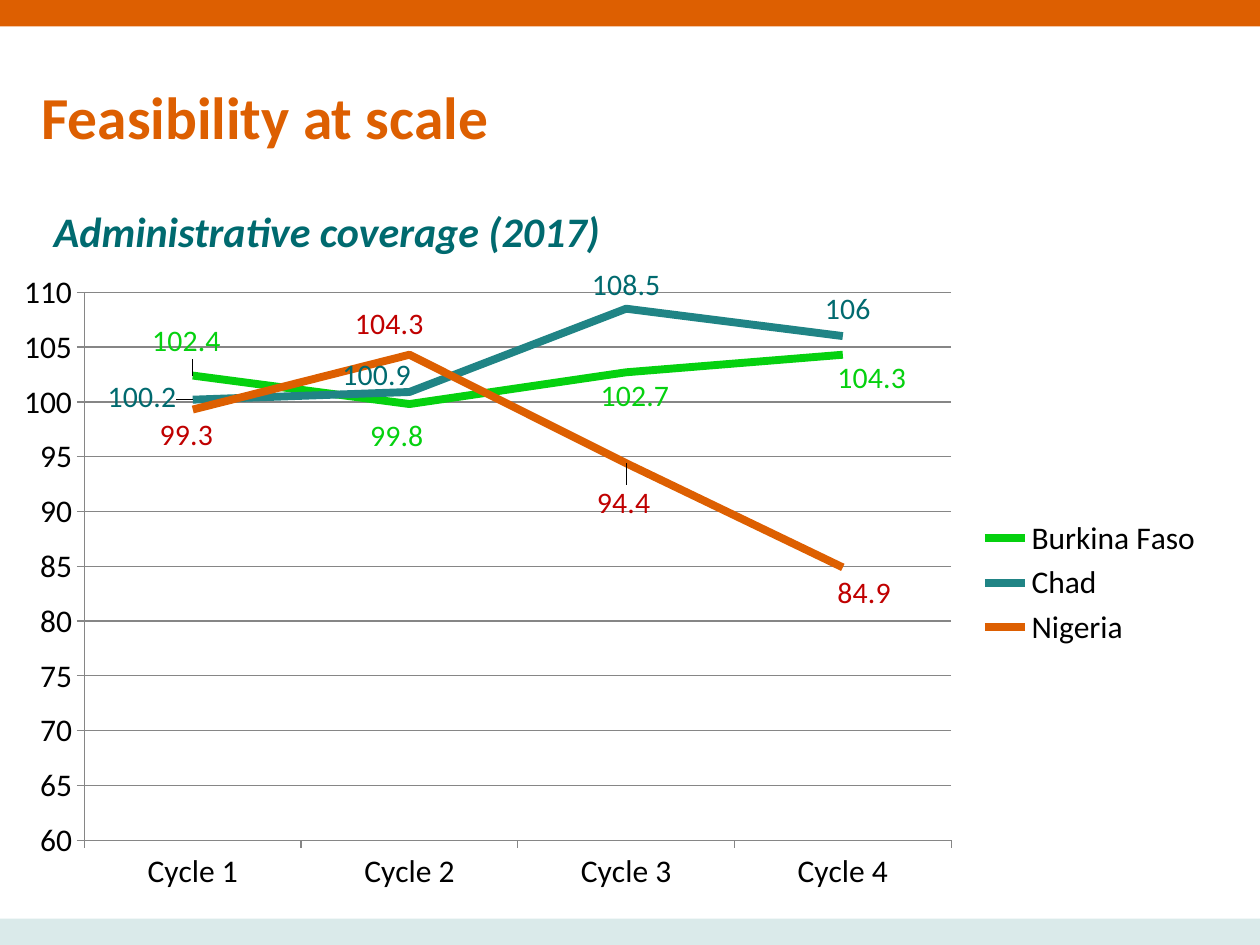
from lxml import etree
from pptx import Presentation
from pptx.chart.data import CategoryChartData
from pptx.dml.color import RGBColor
from pptx.enum.chart import (XL_CHART_TYPE, XL_LABEL_POSITION,
                             XL_LEGEND_POSITION, XL_TICK_MARK)
from pptx.enum.shapes import MSO_SHAPE
from pptx.enum.text import MSO_ANCHOR, PP_ALIGN
from pptx.oxml.ns import qn
from pptx.util import Inches, Pt

RECTANGLE = MSO_SHAPE.RECTANGLE
LINE = XL_CHART_TYPE.LINE
ABOVE, BELOW, LEFT = (XL_LABEL_POSITION.ABOVE, XL_LABEL_POSITION.BELOW,
                      XL_LABEL_POSITION.LEFT)
LEGEND_RIGHT = XL_LEGEND_POSITION.RIGHT
TICK_OUT = XL_TICK_MARK.OUTSIDE
BOTTOM, TOP = MSO_ANCHOR.BOTTOM, MSO_ANCHOR.TOP
ALIGN_LEFT = PP_ALIGN.LEFT

FONT = "Calibri"
SLIDE_W, SLIDE_H = 10, 7.5
BAR_H = 0.21
MARGIN = 0.33
CHART_W, CHART_H = 9.65, 5.11
PLOT_AREA = (0.67, 0.25, 6.88, 4.35)

COLORS = {
    "orange": "DD5F01",
    "mist": "DAEAEA",
    "deep_teal": "006A6F",
    "teal": "208485",
    "green": "05D10F",
    "red": "C00000",
    "grid": "868686",
    "black": "000000",
}

CYCLES = [f"Cycle {number}" for number in range(1, 5)]
COUNTRIES = [
    ("Burkina Faso", (102.4, 99.8, 102.7, 104.3), "green", "green",
     ((ABOVE, -0.05, -0.09), (BELOW, -0.1, 0.07),
      (BELOW, 0.07, 0), (BELOW, 0.23, 0))),
    ("Chad", (100.2, 100.9, 108.5, 106), "teal", "deep_teal",
     ((LEFT, -0.09, -0.02), (ABOVE, -0.26, 0.05),
      (ABOVE, 0, 0), (ABOVE, 0.04, -0.03))),
    ("Nigeria", (99.3, 104.3, 94.4, 84.9), "orange", "red",
     ((BELOW, -0.05, 0.02), (ABOVE, -0.16, -0.06),
      (BELOW, -0.02, 0.13), (BELOW, 0.17, 0.02))),
]


def rgb(name):
    return RGBColor.from_string(COLORS[name])


def format_font(font, size, color, bold=False, italic=False):
    font.name = FONT
    font.size = Pt(size)
    font.bold = bold
    font.italic = italic
    font.color.rgb = rgb(color)


def write_text(holder, text, anchor=TOP, inset=None, spacing=None, **style):
    frame = holder.text_frame
    frame.word_wrap = True
    frame.vertical_anchor = anchor
    if inset is not None:
        frame.margin_left = frame.margin_right = Inches(inset)
        frame.margin_top = frame.margin_bottom = Inches(inset)
    paragraph = frame.paragraphs[0]
    paragraph.alignment = ALIGN_LEFT
    if spacing:
        paragraph.line_spacing = spacing
    run = paragraph.add_run()
    run.text = text
    format_font(run.font, **style)


def add_bar(slide, top, color):
    bar = slide.shapes.add_shape(RECTANGLE, 0, Inches(top),
                                 Inches(SLIDE_W), Inches(BAR_H))
    bar.shadow.inherit = False
    bar.fill.solid()
    bar.fill.fore_color.rgb = rgb(color)
    bar.line.fill.background()


def add_title(slide, text):
    title = slide.shapes.title
    title.left, title.top = Inches(MARGIN), Inches(0.49)
    title.width, title.height = Inches(7.23), Inches(0.72)
    write_text(title, text, anchor=BOTTOM, inset=0, spacing=0.9,
               size=34, color="orange", bold=True)


def add_subtitle(slide, text):
    subtitle = slide.shapes.add_textbox(Inches(MARGIN), Inches(1.58),
                                        Inches(6.48), Inches(0.5))
    write_text(subtitle, text, size=24, color="deep_teal",
               bold=True, italic=True)


def manual_layout(**settings):
    layout = etree.Element(qn("c:layout"))
    manual = etree.SubElement(layout, qn("c:manualLayout"))
    for tag, value in settings.items():
        etree.SubElement(manual, qn(f"c:{tag}")).set("val", str(value))
    return layout


def place_plot_area(chart):
    left, top, width, height = PLOT_AREA
    plot_area = chart._chartSpace.find(".//" + qn("c:plotArea"))
    for automatic in plot_area.findall(qn("c:layout")):
        plot_area.remove(automatic)
    plot_area.insert(0, manual_layout(
        layoutTarget="inner", xMode="edge", yMode="edge",
        x=left / CHART_W, y=top / CHART_H,
        w=width / CHART_W, h=height / CHART_H))


def format_axis(axis):
    axis.major_tick_mark = TICK_OUT
    axis.format.line.color.rgb = rgb("grid")
    axis.format.line.width = Pt(0.75)
    format_font(axis.tick_labels.font, 18, "black")


def format_series(series, line_color, label_color, placements):
    series.smooth = False
    series.format.line.color.rgb = rgb(line_color)
    series.format.line.width = Pt(4.5)
    for index, (position, dx, dy) in enumerate(placements):
        label = series.points[index].data_label
        format_font(label.font, 17, label_color)
        label.position = position
    labels = series._element.iter(qn("c:dLbl"))
    for label, (position, dx, dy) in zip(labels, placements):
        label.insert(1, manual_layout(x=dx / CHART_W, y=dy / CHART_H))


def add_coverage_chart(slide):
    coverage = CategoryChartData()
    coverage.categories = CYCLES
    for country, values, *_ in COUNTRIES:
        coverage.add_series(country, values)
    chart = slide.shapes.add_chart(LINE, 0, Inches(2.07), Inches(CHART_W),
                                   Inches(CHART_H), coverage).chart
    format_font(chart.font, 10, "black")
    chart.has_title = False
    chart.has_legend = True
    chart.legend.position = LEGEND_RIGHT
    chart.legend.include_in_layout = False
    format_font(chart.legend.font, 18, "black")

    format_axis(chart.category_axis)
    scale = chart.value_axis
    format_axis(scale)
    scale.minimum_scale, scale.maximum_scale = 60, 110
    scale.major_unit = 5
    scale.has_major_gridlines = True
    scale.major_gridlines.format.line.color.rgb = rgb("grid")
    scale.major_gridlines.format.line.width = Pt(0.75)

    plot = chart.plots[0]
    plot.vary_by_categories = False
    for series, (_, _, *style) in zip(plot.series, COUNTRIES):
        format_series(series, *style)
    place_plot_area(chart)


def main():
    deck = Presentation()
    deck.slide_width, deck.slide_height = Inches(SLIDE_W), Inches(SLIDE_H)
    slide = deck.slides.add_slide(deck.slide_layouts[5])
    add_bar(slide, 0, "orange")
    add_bar(slide, SLIDE_H - BAR_H, "mist")
    add_title(slide, "Feasibility at scale")
    add_subtitle(slide, "Administrative coverage (2017)")
    add_coverage_chart(slide)
    deck.save("out.pptx")


if __name__ == "__main__":
    main()
